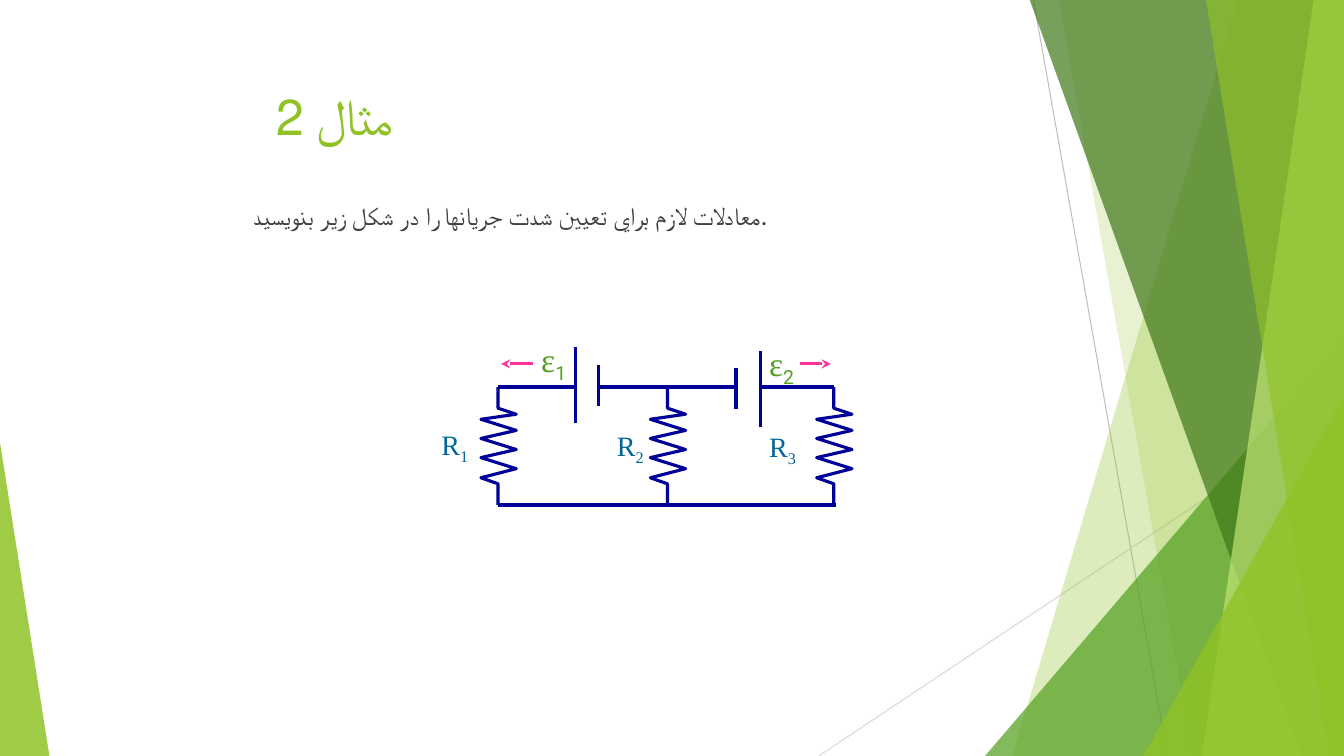
from dataclasses import dataclass

from pptx import Presentation
from pptx.dml.color import RGBColor
from pptx.enum.shapes import MSO_CONNECTOR, MSO_SHAPE
from pptx.enum.text import MSO_ANCHOR, MSO_AUTO_SIZE, PP_ALIGN
from pptx.oxml.ns import qn
from pptx.oxml.xmlchemy import OxmlElement
from pptx.util import Pt

PX = 9144


@dataclass(frozen=True)
class Theme:
    lime: str = "90C226"
    pale: str = "C0E474"
    green: str = "54A021"
    forest: str = "3F7819"
    ink: str = "404040"
    wire: str = "000099"
    arrow: str = "FF3399"
    resistor: str = "006699"
    rule_dark: str = "BFBFBF"
    rule_light: str = "D9D9D9"
    text_font: str = "Lato"
    symbol_font: str = "Times New Roman"
    index_font: str = "Roboto"
    title_size: int = 36
    body_size: int = 18
    emf_size: int = 24
    resistor_size: int = 20
    rule_width: float = 0.75
    wire_width: float = 2.25


@dataclass(frozen=True)
class Box:
    left: int
    top: int
    width: int
    height: int

    def at(self, x, y):
        return self.left + x, self.top + y

    def emu(self):
        return [side * PX for side in (self.left, self.top, self.width, self.height)]


THEME = Theme()


def style_font(font, name, size, color):
    font.name = name
    font.size = Pt(size)
    font.color.rgb = RGBColor.from_string(color)


def add_line(page, start, end, color, width, arrow=False):
    line = page.shapes.add_connector(
        MSO_CONNECTOR.STRAIGHT, *[value * PX for value in (*start, *end)])
    line.line.color.rgb = RGBColor.from_string(color)
    line.line.width = Pt(width)
    properties = line.element.spPr
    if arrow:
        head = OxmlElement("a:tailEnd")
        head.set("type", "stealth")
        properties.find(qn("a:ln")).append(head)
    properties.append(OxmlElement("a:effectLst"))


def add_outline(page, points, close):
    builder = page.shapes.build_freeform(*points[0], scale=PX)
    builder.add_line_segments(points[1:], close=close)
    shape = builder.convert_to_shape()
    shape.shadow.inherit = False
    return shape


def tint(shape, color, opacity):
    shape.shadow.inherit = False
    shape.fill.solid()
    shape.fill.fore_color.rgb = RGBColor.from_string(color)
    shape.line.fill.background()
    alpha = OxmlElement("a:alpha")
    alpha.set("val", str(opacity * 1000))
    shape.element.spPr.find(qn("a:solidFill"))[0].append(alpha)


def add_triangle(page, box, apex, color, opacity):
    triangle = page.shapes.add_shape(MSO_SHAPE.ISOSCELES_TRIANGLE, *box.emu())
    triangle.adjustments[0] = apex
    tint(triangle, color, opacity)


def add_facet(page, box, top_x, bottom_x, color, opacity):
    corners = [box.at(top_x, 0), box.at(box.width, 0),
               box.at(box.width, box.height), box.at(bottom_x, box.height)]
    tint(add_outline(page, corners, True), color, opacity)


def draw_facets(page, box):
    add_line(page, box.at(213, 1), box.at(346, 751), THEME.rule_dark, THEME.rule_width)
    add_line(page, box.at(521, 404), box.at(0, 751), THEME.rule_light, THEME.rule_width)
    add_facet(page, box, 416, 192, THEME.lime, 30)
    add_facet(page, box, 238, 371, THEME.lime, 20)
    add_triangle(page, Box(*box.at(165, 334), 356, 417), 1, THEME.green, 72)
    add_facet(page, box, 209, 479, THEME.forest, 70)
    add_facet(page, box, 491, 380, THEME.pale, 70)
    add_facet(page, box, 384, 506, THEME.lime, 65)
    add_triangle(page, Box(*box.at(322, 394), 199, 357), 1, THEME.lime, 80)


def draw_title(page, box, text):
    title = page.shapes.title
    title.left, title.top, title.width, title.height = box.emu()
    frame = title.text_frame
    frame.text = text
    frame.auto_size = MSO_AUTO_SIZE.NONE
    frame.vertical_anchor = MSO_ANCHOR.TOP
    para = frame.paragraphs[0]
    para.alignment = PP_ALIGN.LEFT
    style_font(para.font, THEME.text_font, THEME.title_size, THEME.lime)


def draw_question(page, box, text):
    frame = page.shapes.add_textbox(*box.emu()).text_frame
    frame.word_wrap = True
    frame.text = text
    para = frame.paragraphs[0]
    para.space_before = Pt(10)
    style_font(para.font, THEME.text_font, THEME.body_size, THEME.ink)


def draw_label(page, box, symbol, index, size, color, index_font):
    frame = page.shapes.add_textbox(*box.emu()).text_frame
    frame.word_wrap = False
    para = frame.paragraphs[0]
    style_font(para.font, THEME.symbol_font, size, color)
    para.add_run().text = symbol
    span = para.add_run()
    span.text = str(index)
    if index_font != THEME.symbol_font:
        span.font.name = index_font
    span.font._element.set("baseline", "-25000")


def draw_resistor(page, box):
    turns = [27, 32, 43, 51, 62, 70, 81, 90]
    zigzag = [(-17 if order % 2 else 18, y) for order, y in enumerate(turns)]
    path = [(0, 0), (0, 21), *zigzag, (0, 96), (0, box.height)]
    shape = add_outline(page, [box.at(*point) for point in path], False)
    shape.fill.background()
    shape.line.color.rgb = RGBColor.from_string(THEME.wire)
    shape.line.width = Pt(THEME.wire_width)


def draw_circuit(page, box):
    rail = 53
    columns = [66, 234, 399]
    plates = [(143, 13, 89), (166, 31, 72), (302, 34, 75), (326, 17, 93)]
    wires = [(66, 143), (166, 234), (234, 302), (326, 399)]
    segments = [((x, top), (x, bottom)) for x, top, bottom in plates]
    segments += [((start, rail), (end, rail)) for start, end in wires]
    segments.append(((columns[0], box.height), (columns[-1] + 2, box.height)))
    for start, end in segments:
        add_line(page, box.at(*start), box.at(*end), THEME.wire, THEME.wire_width)
    for start, end in [(101, 69), (365, 396)]:
        add_line(page, box.at(start, 30), box.at(end, 30),
                 THEME.arrow, THEME.wire_width, arrow=True)
    for x in columns:
        draw_resistor(page, Box(*box.at(x, rail), 0, box.height - rail))
    for index, place in enumerate([(99, 0), (325, 4)], 1):
        draw_label(page, Box(*box.at(*place), 47, 51), "ε", index,
                   THEME.emf_size, THEME.green, THEME.index_font)
    for index, place in enumerate([(0, 88), (174, 89), (325, 90)], 1):
        draw_label(page, Box(*box.at(*place), 49, 44), "R", index,
                   THEME.resistor_size, THEME.resistor, THEME.symbol_font)


def main():
    deck = Presentation()
    deck.slide_width, deck.slide_height = 1333 * PX, 750 * PX
    page = deck.slides.add_slide(deck.slide_layouts[5])
    draw_facets(page, Box(812, -1, 521, 751))
    add_triangle(page, Box(0, 439, 49, 311), 0, THEME.lime, 85)
    draw_title(page, Box(251, 79, 875, 92), " مثال 2")
    draw_question(page, Box(241, 194, 850, 92),
                  "معادلات لازم براي تعيين شدت جريانها را در شكل زير بنويسيد.")
    draw_circuit(page, Box(428, 331, 418, 170))
    deck.save("out.pptx")


if __name__ == "__main__":
    main()
